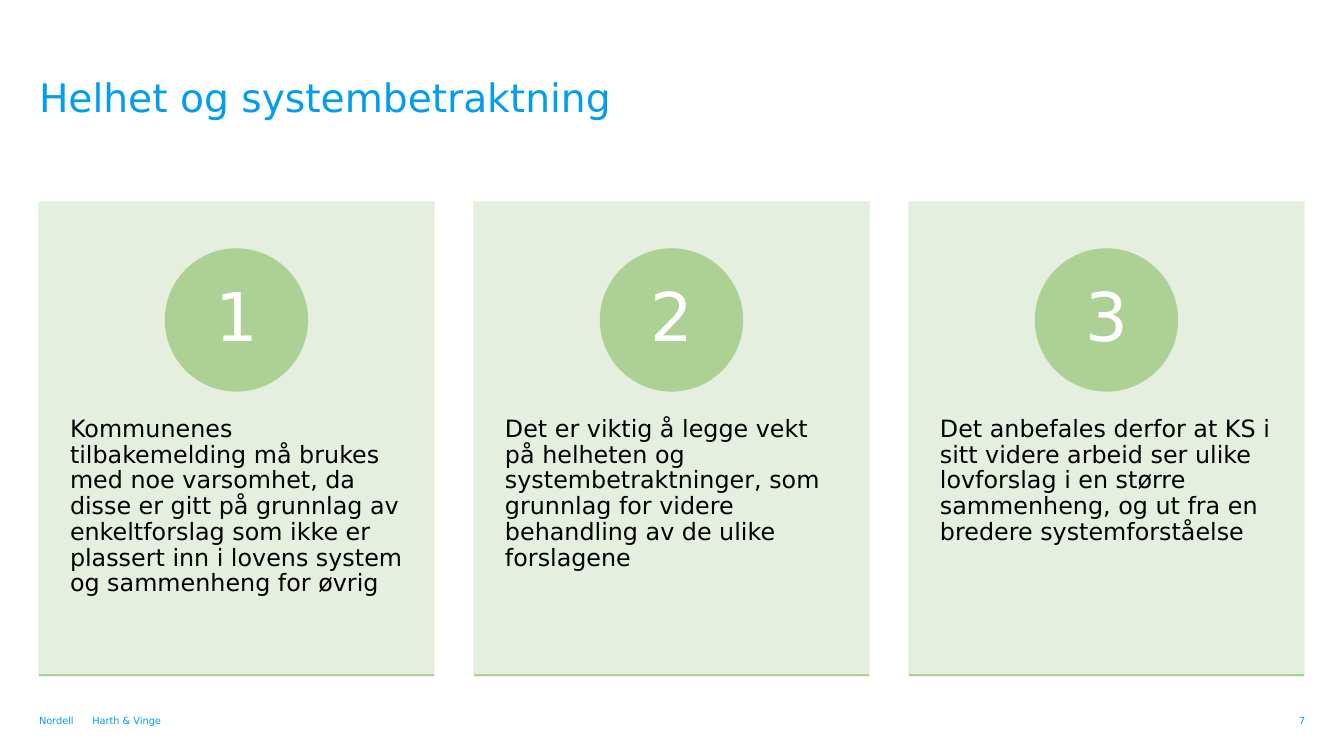
"""Build the slide "Helhet og systembetraktning" with three numbered cards."""
from lxml.etree import SubElement
from pptx import Presentation
from pptx.dml.color import RGBColor
from pptx.enum.shapes import MSO_CONNECTOR, MSO_SHAPE
from pptx.enum.text import MSO_ANCHOR, MSO_AUTO_SIZE, PP_ALIGN
from pptx.oxml.ns import qn
from pptx.util import Emu, Pt

BLUE, GREEN, PALE_GREEN = "009DF0", "ADD095", "E3EEDD"
LEFT, CARD_TOP, CARD_WIDTH, CARD_HEIGHT, CARD_STEP = 39, 202, 395, 474, 435
CIRCLE_TOP, CIRCLE_SIZE = 249, 142


def px(*lengths):
    return [Emu(round(length * 914400 / 100.8)) for length in lengths]


def write(shape, text, size, color, align=PP_ALIGN.LEFT, anchor=MSO_ANCHOR.TOP,
          insets=(0, 0, 0, 0), spacing=None):
    frame = shape.text_frame
    frame.text = text
    frame.word_wrap = True
    frame.auto_size = MSO_AUTO_SIZE.NONE
    frame.vertical_anchor = anchor
    (frame.margin_left, frame.margin_top,
     frame.margin_right, frame.margin_bottom) = px(*insets)
    paragraph = frame.paragraphs[0]
    paragraph.alignment = align
    paragraph.line_spacing = spacing
    paragraph.font.name = "DejaVu Sans"
    paragraph.font.size = Pt(size)
    paragraph.font.color.rgb = RGBColor.from_string(color)


presentation = Presentation()
presentation.slide_width, presentation.slide_height = px(1344, 756)
slide = presentation.slides.add_slide(presentation.slide_layouts[5])
shapes = slide.shapes

title = shapes.title
title.left, title.top, title.width, title.height = px(LEFT, 73, 1155, 103)
write(title, "Helhet og systembetraktning", 28, BLUE)

messages = [
    "Kommunenes tilbakemelding må brukes med noe varsomhet, da disse er gitt på "
    "grunnlag av enkeltforslag som ikke er plassert inn i lovens system og "
    "sammenheng for øvrig",
    "Det er viktig å legge vekt på helheten og systembetraktninger, som grunnlag "
    "for videre behandling av de ulike forslagene",
    "Det anbefales derfor at KS i sitt videre arbeid ser ulike lovforslag i en "
    "større sammenheng, og ut fra en bredere systemforståelse",
]
for index, message in enumerate(messages):
    card_left = LEFT + index * CARD_STEP
    card = shapes.add_shape(MSO_SHAPE.RECTANGLE,
                            *px(card_left, CARD_TOP, CARD_WIDTH, CARD_HEIGHT))
    circle_left = card_left + (CARD_WIDTH - CIRCLE_SIZE) / 2
    circle = shapes.add_shape(MSO_SHAPE.OVAL,
                              *px(circle_left, CIRCLE_TOP, CIRCLE_SIZE, CIRCLE_SIZE))
    for part, color in ((card, PALE_GREEN), (circle, GREEN)):
        part.shadow.inherit = False
        part.fill.solid()
        part.fill.fore_color.rgb = RGBColor.from_string(color)
        part.line.color.rgb = RGBColor.from_string(color)
        part.line.width = Pt(1)
    for card_color in card._element.spPr.iter(qn("a:srgbClr")):
        SubElement(card_color, qn("a:alpha"), val="90000")
    write(card, message, 17, "000000", insets=(31, 215, 31, 46), spacing=0.9)
    write(circle, str(index + 1), 48, "FFFFFF", PP_ALIGN.CENTER,
          MSO_ANCHOR.MIDDLE, spacing=0.9)

    card_bottom = CARD_TOP + CARD_HEIGHT - 1
    base_line = shapes.add_connector(
        MSO_CONNECTOR.STRAIGHT,
        *px(card_left, card_bottom, card_left + CARD_WIDTH, card_bottom))
    base_line.line.color.rgb = RGBColor.from_string(GREEN)
    base_line.line.width = Pt(1)
    SubElement(base_line._element.spPr, qn("a:effectLst"))

footers = [
    ("Nordell", (LEFT, 702, 86, 24), PP_ALIGN.LEFT),
    ("Harth & Vinge", (51, 714, 110, 12), PP_ALIGN.RIGHT),
    ("7", (1236, 714, 69, 12), PP_ALIGN.RIGHT),
]
for text, box, align in footers:
    footer = shapes.add_textbox(*px(*box))
    write(footer, text, 7, BLUE, align, MSO_ANCHOR.BOTTOM)

presentation.save("out.pptx")
